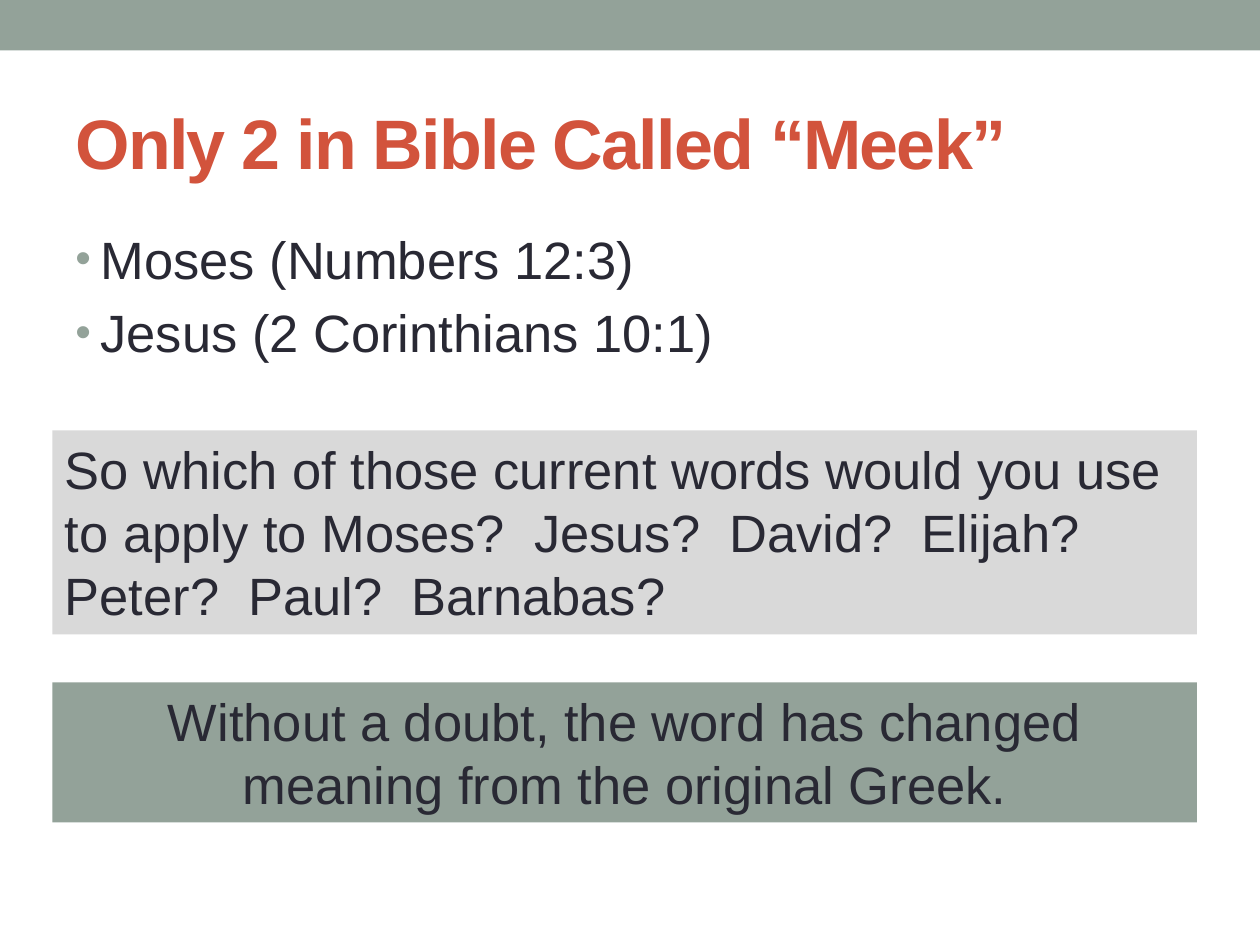
from lxml import etree
from pptx import Presentation
from pptx.dml.color import RGBColor
from pptx.enum import shapes, text
from pptx.oxml.ns import qn
from pptx.util import Pt

THEME = dict(
    font="Arial", title_size=40, body_size=30,
    sage="93A299", red="D2533C", ink="292934", grey="D9D9D9",
)
LEFT, CENTER = text.PP_ALIGN.LEFT, text.PP_ALIGN.CENTER
TOP, MIDDLE = text.MSO_ANCHOR.TOP, text.MSO_ANCHOR.MIDDLE

TITLE = "Only 2 in Bible Called “Meek”"
VERSES = ["Moses (Numbers 12:3)", "Jesus (2 Corinthians 10:1)"]
# text, top, height, fill, alignment
PANELS = [
    ("So which of those current words would you use to apply to Moses?  Jesus?  "
     "David?  Elijah?  Peter?  Paul?  Barnabas?", 246, 116.6, "grey", LEFT),
    ("Without a doubt, the word has changed meaning from the original Greek.",
     390, 80, "sage", CENTER),
]
PAGE_W, PAGE_H = 720, 540
MARGIN, PANEL_X, PANEL_W = 36, 30, 654
INDENT = 14.4


def color(name):
    return RGBColor.from_string(THEME[name])


def place(sp, *box):
    for name, value in zip(("left", "top", "width", "height"), box):
        setattr(sp, name, Pt(value))


def write(sp, lines, size="body_size", ink="ink", bold=False, align=LEFT, anchor=TOP):
    tf = sp.text_frame
    frame = dict(word_wrap=True, auto_size=text.MSO_AUTO_SIZE.NONE, vertical_anchor=anchor)
    for name, value in frame.items():
        setattr(tf, name, value)
    for i, line in enumerate(lines):
        p = tf.add_paragraph() if i else tf.paragraphs[0]
        p.alignment = align
        r = p.add_run()
        r.text = line
        for name, value in dict(name=THEME["font"], size=Pt(THEME[size]), bold=bold).items():
            setattr(r.font, name, value)
        r.font.color.rgb = color(ink)
    return tf.paragraphs


def add_block(s, box, fill):
    sp = s.shapes.add_shape(shapes.MSO_SHAPE.RECTANGLE, *map(Pt, box))
    sp.shadow.inherit = False
    sp.fill.solid()
    sp.fill.fore_color.rgb = color(fill)
    sp.line.fill.background()
    return sp


def add_bullet(p):
    """Hang the paragraph on a sage bullet, with 20% space before."""
    pPr = p._p.get_or_add_pPr()
    for name, value in dict(marL=INDENT, indent=-INDENT).items():
        pPr.set(name, str(Pt(value)))
    before = etree.SubElement(pPr, qn("a:spcBef"))
    etree.SubElement(before, qn("a:spcPct"), val="20000")
    tint = etree.SubElement(pPr, qn("a:buClr"))
    etree.SubElement(tint, qn("a:srgbClr"), val=THEME["sage"])
    etree.SubElement(pPr, qn("a:buSzPct"), val="85000")
    etree.SubElement(pPr, qn("a:buFont"), typeface=THEME["font"])
    etree.SubElement(pPr, qn("a:buChar"), char="•")


def main():
    prs = Presentation()
    prs.slide_width, prs.slide_height = Pt(PAGE_W), Pt(PAGE_H)
    s = prs.slides.add_slide(prs.slide_layouts.get_by_name("Title Only"))

    add_block(s, (0, 0, PAGE_W, 28.8), "sage")

    title = s.shapes.title
    place(title, MARGIN, 42, PAGE_W - 2 * MARGIN, 78)
    for p in write(title, [TITLE], "title_size", "red", bold=True, anchor=MIDDLE):
        p.runs[0].font._element.set("spc", "-100")

    verses = s.shapes.add_textbox(*map(Pt, (MARGIN, 126, PAGE_W - 2 * MARGIN, 114)))
    for p in write(verses, VERSES):
        add_bullet(p)

    for words, top, height, fill, align in PANELS:
        panel = add_block(s, (PANEL_X, top, PANEL_W, height), fill)
        write(panel, [words], align=align)

    prs.save("out.pptx")


if __name__ == "__main__":
    main()
